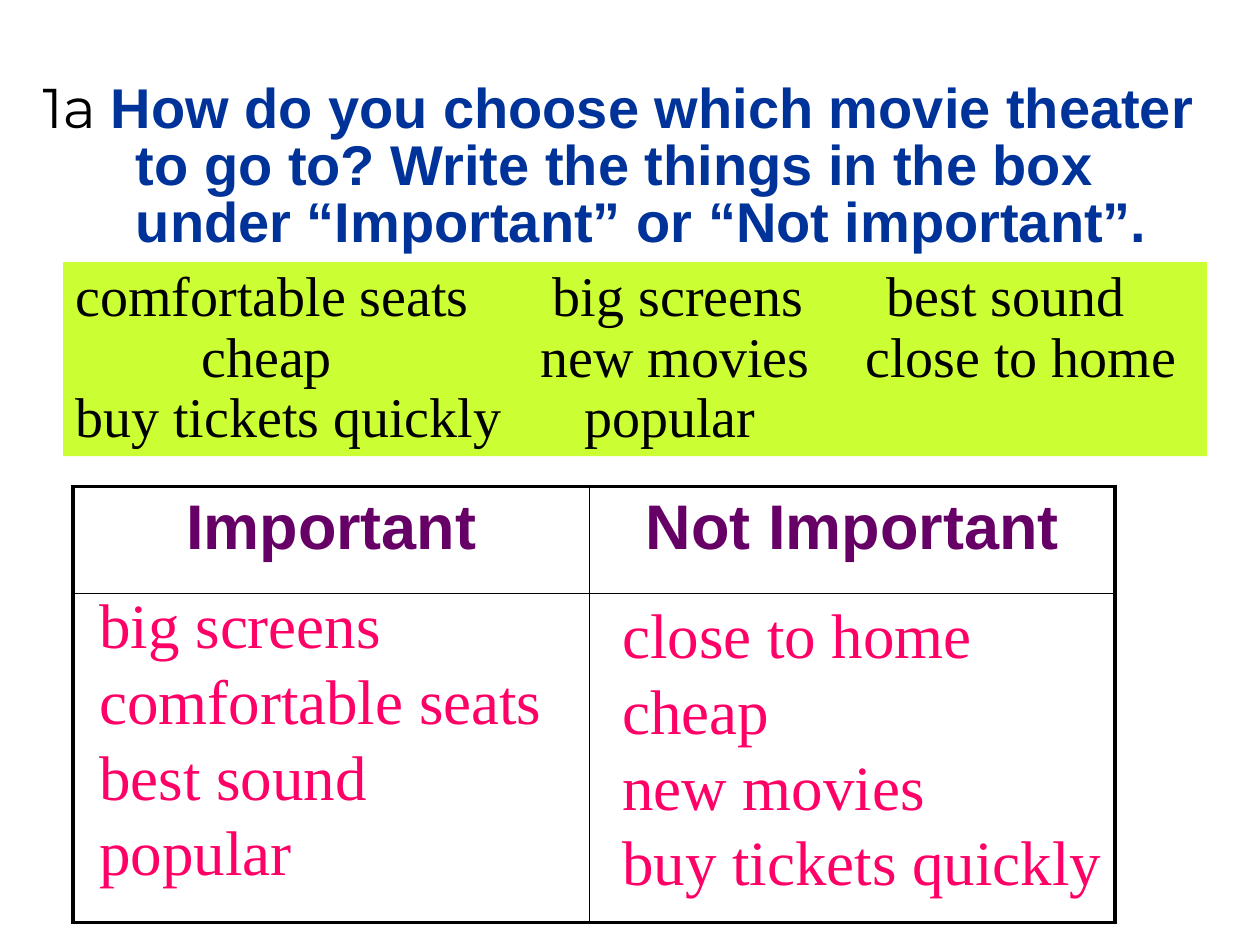
import pptx
import pptx.util
import pptx.dml.color
import pptx.enum.shapes
import pptx.enum.text
import pptx.oxml.ns
import lxml.etree

COLORS = {
    "black": "000000",
    "white": "FFFFFF",
    "blue": "003399",
    "lime": "CCFF33",
    "purple": "660066",
    "pink": "FF0066",
}
qn = pptx.oxml.ns.qn

deck = pptx.Presentation()
deck.slide_width = pptx.util.Inches(10)
deck.slide_height = pptx.util.Inches(7.5)
page = deck.slides.add_slide(deck.slide_layouts[6])
column = deck.slide_width / 100
row = deck.slide_height / 75


def grid(left, top, width, height):
    return [round(n * unit) for n, unit in zip((left, top, width, height), (column, row) * 2)]


def write(para, text, size=32, font="Times New Roman", color="black", bold=False):
    span = para.add_run()
    span.text = text
    span.font.size = pptx.util.Pt(size)
    span.font.name = font
    span.font.bold = bold
    span.font.color.rgb = pptx.dml.color.RGBColor.from_string(COLORS[color])


task = page.shapes.add_textbox(*grid(2.4, 6.1, 97.6, 14.6)).text_frame
task.word_wrap = True
task_lines = [
    "How do you choose which movie theater",
    "to go to? Write the things in the box",
    "under “Important” or “Not important”.",
]
for index, line in enumerate(task_lines):
    para = task.paragraphs[0] if index == 0 else task.add_paragraph()
    para.line_spacing = 0.85
    if index == 0:
        write(para, "1a ", font="Montserrat")
    else:
        para._p.get_or_add_pPr().set("marL", str(round(7.4 * column)))
    write(para, line, font="Arial", color="blue", bold=True)

choices = page.shapes.add_shape(
    pptx.enum.shapes.MSO_SHAPE.RECTANGLE, *grid(5, 20.8, 90.8, 15.4)
)
choices.shadow.inherit = False
choices.fill.solid()
choices.fill.fore_color.rgb = pptx.dml.color.RGBColor.from_string(COLORS["lime"])
choices.line.fill.background()
choices.text_frame.vertical_anchor = pptx.enum.text.MSO_ANCHOR.TOP
choice_lines = [
    ("comfortable seats\tbig screens\tbest sound", [37.9, 64.4]),
    ("\tcheap\tnew movies\tclose to home", [10, 36.9, 62.7]),
    ("buy tickets quickly\tpopular", [40.4]),
]
for index, (line, stops) in enumerate(choice_lines):
    para = choices.text_frame.paragraphs[0] if index == 0 else choices.text_frame.add_paragraph()
    para.alignment = pptx.enum.text.PP_ALIGN.LEFT
    para.line_spacing = 0.9
    tabs = lxml.etree.SubElement(para._p.get_or_add_pPr(), qn("a:tabLst"))
    for stop in stops:
        lxml.etree.SubElement(tabs, qn("a:tab"), pos=str(round(stop * column)), algn="l")
    write(para, line)

frame = page.shapes.add_table(2, 2, *grid(5.8, 38.6, 82.7, 34.6))
table = frame.table
for index, width in enumerate((41, 41.7)):
    table.columns[index].width = round(width * column)
for index, height in enumerate((8.5, 26.1)):
    table.rows[index].height = round(height * row)

for r in range(2):
    for c in range(2):
        cell = table.cell(r, c)
        outer_edges = {"lnL": c == 0, "lnR": c == 1, "lnT": r == 0, "lnB": r == 1}
        properties = cell._tc.get_or_add_tcPr()
        for edge, outer in outer_edges.items():
            weight = pptx.util.Pt(2.25 if outer else 1)
            border = lxml.etree.SubElement(properties, qn("a:" + edge), w=str(weight))
            paint = lxml.etree.SubElement(border, qn("a:solidFill"))
            lxml.etree.SubElement(paint, qn("a:srgbClr"), val=COLORS["black"])
        cell.fill.solid()
        cell.fill.fore_color.rgb = pptx.dml.color.RGBColor.from_string(COLORS["white"])
        shade = properties.find(qn("a:solidFill")).find(qn("a:srgbClr"))
        lxml.etree.SubElement(shade, qn("a:alpha"), val="70000")

for index, heading in enumerate(("Important", "Not Important")):
    para = table.cell(0, index).text_frame.paragraphs[0]
    para.alignment = pptx.enum.text.PP_ALIGN.CENTER
    write(para, heading, size=36, font="Arial", color="purple", bold=True)

answers = [
    ((6.9, 46, 39.7, 25.2), ["big screens", "comfortable seats", "best sound", "popular"]),
    ((48.4, 46.8, 43.2, 25.2), ["close to home", "cheap", "new movies", "buy tickets quickly"]),
]
for place, lines in answers:
    box = page.shapes.add_textbox(*grid(*place)).text_frame
    box.word_wrap = False
    for index, line in enumerate(lines):
        para = box.paragraphs[0] if index == 0 else box.add_paragraph()
        write(para, line, size=36, color="pink")

deck.save("out.pptx")
